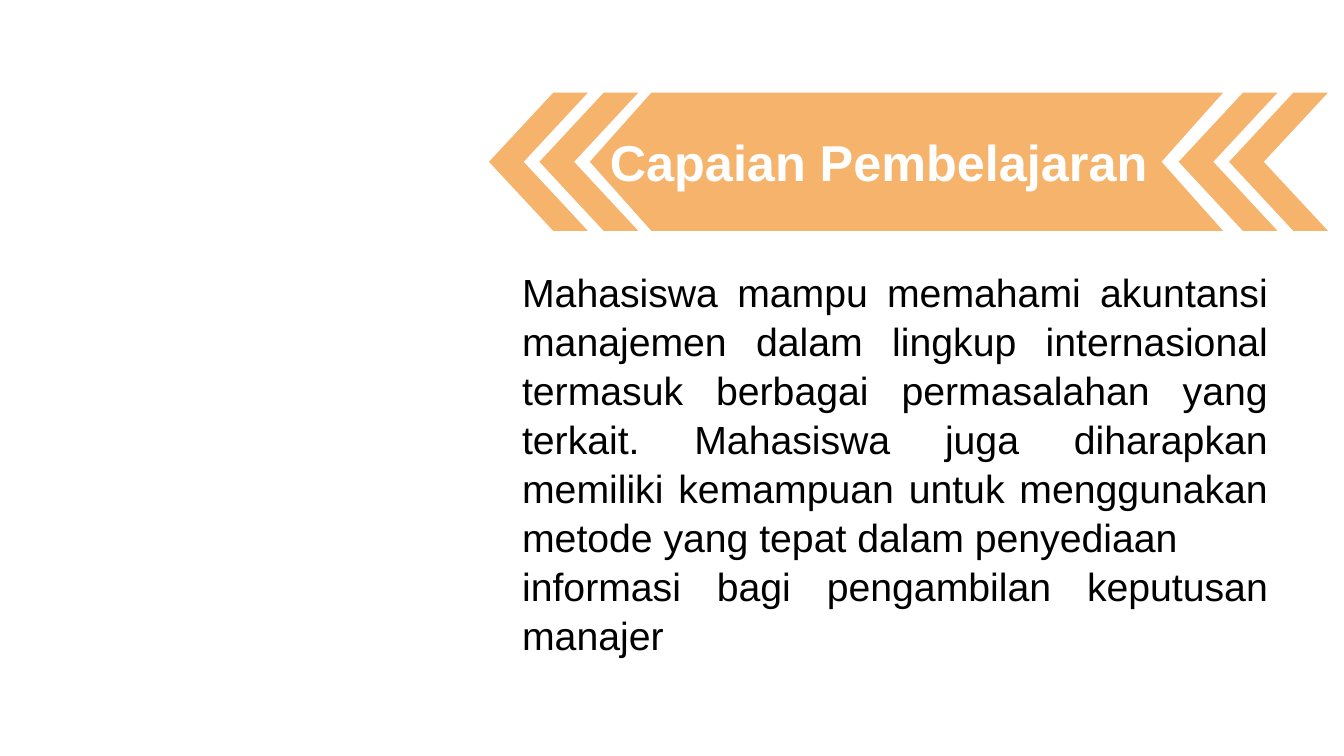
from dataclasses import dataclass

from lxml import etree
from pptx import Presentation
from pptx.dml.color import RGBColor
from pptx.enum.shapes import MSO_SHAPE
from pptx.enum.text import MSO_ANCHOR, PP_ALIGN
from pptx.oxml.ns import qn
from pptx.util import Inches, Pt


@dataclass(frozen=True)
class Theme:
    font: str = "Arial"
    orange: RGBColor = RGBColor(0xF3, 0x93, 0x2D)
    white: RGBColor = RGBColor(0xFF, 0xFF, 0xFF)
    black: RGBColor = RGBColor(0x00, 0x00, 0x00)
    opacity_percent: int = 70
    title_size: int = 36
    body_size: int = 28


theme = Theme()


def paint_banner_part(shape):
    """Give the shape the translucent orange fill, without outline or shadow."""
    shape.shadow.inherit = False
    shape.line.fill.background()
    shape.fill.solid()
    shape.fill.fore_color.rgb = theme.orange
    color = shape.fill._xPr.find(qn("a:solidFill"))[0]
    etree.SubElement(color, qn("a:alpha"), val=str(theme.opacity_percent * 1000))


def add_text(page, paragraphs, left, top, width, height, *, size, color,
             bold=False, align=PP_ALIGN.LEFT, line_spacing=None):
    box = page.shapes.add_textbox(Inches(left), Inches(top), Inches(width), Inches(height))
    frame = box.text_frame
    frame.word_wrap = True
    frame.vertical_anchor = MSO_ANCHOR.MIDDLE
    for index, text in enumerate(paragraphs):
        para = frame.add_paragraph() if index else frame.paragraphs[0]
        para.alignment = align
        para.line_spacing = line_spacing
        span = para.add_run()
        span.text = text
        span.font.name = theme.font
        span.font.size = Pt(size)
        span.font.bold = bold
        span.font.color.rgb = color


deck = Presentation()
deck.slide_width = Inches(13.33)
deck.slide_height = Inches(7.5)
page = deck.slides.add_slide(deck.slide_layouts[6])

# Banner: a notched ribbon with two chevrons on each side
banner = page.shapes.add_group_shape()
top, height = 0.92, 1.37
middle, bottom = top + height / 2, top + height
ribbon_left, ribbon_right, point_depth = 5.85, 12.13, 0.61
ribbon_points = [
    (ribbon_right, bottom),
    (ribbon_left + point_depth, bottom),
    (ribbon_left, middle),
    (ribbon_left + point_depth, top),
    (ribbon_right, top),
    (ribbon_right - point_depth, middle),
]
corners = [(Inches(x), Inches(y)) for x, y in ribbon_points]
builder = banner.shapes.build_freeform(*corners[0])
builder.add_line_segments(corners[1:], close=True)
paint_banner_part(builder.convert_to_shape())

for left in (5.35, 4.85, 12.19, 11.69):
    chevron = banner.shapes.add_shape(
        MSO_SHAPE.CHEVRON, Inches(left), Inches(top), Inches(0.98), Inches(height))
    chevron.adjustments[0] = 0.65
    chevron.rotation = 180
    paint_banner_part(chevron)

add_text(page, ["Capaian Pembelajaran"], 5.95, 1.25, 6.84, 0.71,
         size=theme.title_size, color=theme.white, bold=True)

outcomes = [
    "Mahasiswa mampu memahami akuntansi manajemen dalam lingkup internasional "
    "termasuk berbagai permasalahan yang terkait. Mahasiswa juga diharapkan "
    "memiliki kemampuan untuk menggunakan metode yang tepat dalam penyediaan",
    "informasi bagi pengambilan keputusan manajer",
]
add_text(page, outcomes, 5.08, 2.65, 7.59, 3.87, size=theme.body_size,
         color=theme.black, align=PP_ALIGN.JUSTIFY, line_spacing=1.04)

deck.save("out.pptx")
